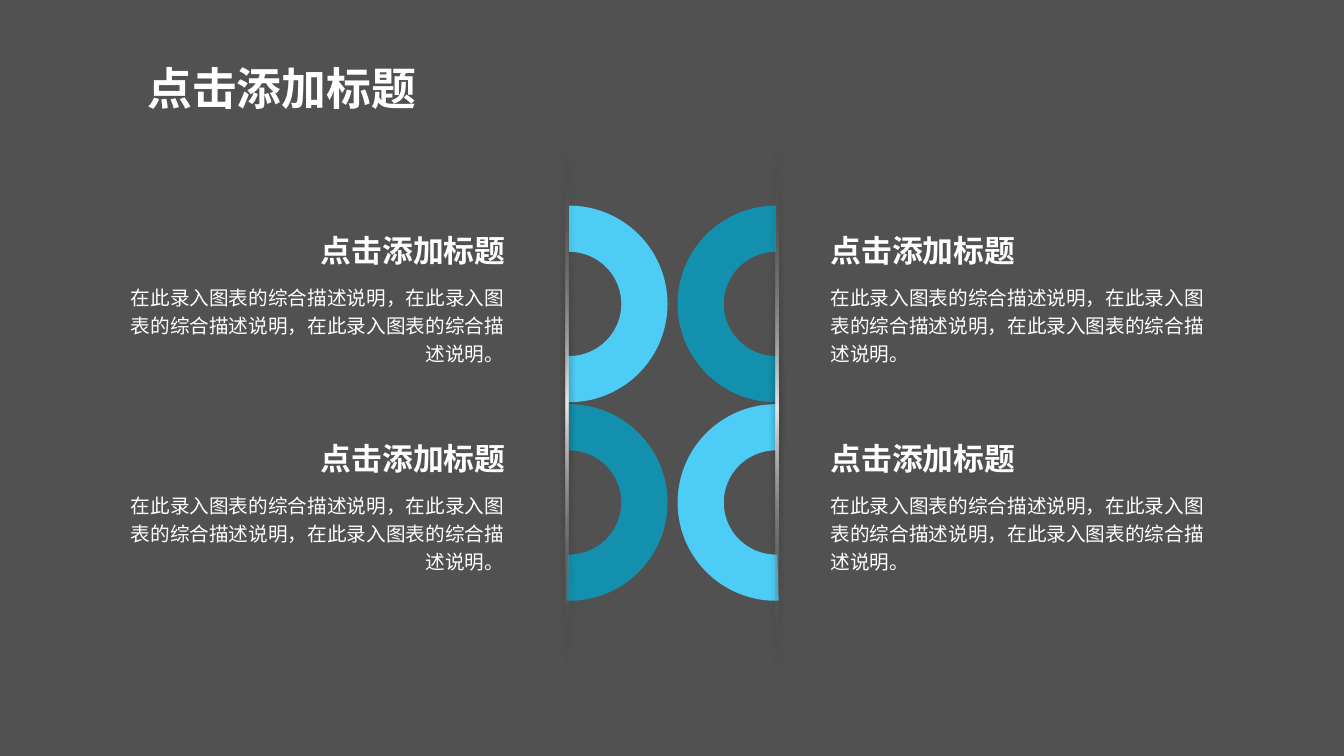
from lxml.etree import SubElement
from pptx import Presentation
from pptx.dml.color import RGBColor
from pptx.enum.shapes import MSO_SHAPE
from pptx.enum.text import MSO_ANCHOR, MSO_AUTO_SIZE, PP_ALIGN
from pptx.oxml import parse_xml
from pptx.oxml.ns import nsdecls, qn
from pptx.util import Inches, Pt

COLORS = {
    "background": "515151",
    "light": "4DCDF5",
    "dark": "1390AD",
    "text": "FFFFFF",
    "bar_end": "404040",
    "bar_middle": "E7E6E6",
    "shadow": "0D0D0D",
}
HEADING = "点击添加标题"
DESCRIPTION = "，".join(["在此录入图表的综合描述说明"] * 3) + "。"


def write_text(box, text, size, font_name, bold, align, spacing=1.0):
    frame = box.text_frame
    frame.word_wrap = True
    frame.auto_size = MSO_AUTO_SIZE.SHAPE_TO_FIT_TEXT
    frame.vertical_anchor = MSO_ANCHOR.TOP
    para = frame.paragraphs[0]
    para.text = text
    para.alignment = align
    para.line_spacing = spacing
    para.space_before = Pt(0)
    para.font.size = Pt(size)
    para.font.bold = bold
    para.font.color.rgb = RGBColor.from_string(COLORS["text"])
    para.font.name = font_name
    properties = para._p.pPr.find(qn("a:defRPr"))
    SubElement(properties, qn("a:ea")).set("typeface", "Noto Sans CJK SC")


deck = Presentation()
deck.slide_width = Inches(13.33)
deck.slide_height = Inches(7.5)
page = deck.slides.add_slide(deck.slide_layouts[5])
page.background.fill.solid()
page.background.fill.fore_color.rgb = RGBColor.from_string(COLORS["background"])

title = page.shapes.title
title.left, title.top = Inches(1.36), Inches(0.55)
title.width, title.height = Inches(2.89), Inches(0.64)
write_text(title, HEADING, 32, "Arial", True, PP_ALIGN.LEFT)
title.text_frame.word_wrap = False

ARCS = [
    (4.67, 90, False, ("light", "dark")),
    (6.72, 270, True, ("dark", "light")),
]
for left, rotation, flipped, row_colors in ARCS:
    for row, color in enumerate(row_colors):
        arc = page.shapes.add_shape(
            MSO_SHAPE.BLOCK_ARC, Inches(left), Inches(2.04 + 1.97 * row), Inches(1.95), Inches(1.95)
        )
        for index, value in enumerate((108, 0.955, 0.235)):
            arc.adjustments[index] = value
        arc.rotation = rotation
        if flipped:
            arc.element.spPr.get_or_add_xfrm().set("flipH", "1")
        arc.fill.solid()
        arc.fill.fore_color.rgb = RGBColor.from_string(COLORS[color])
        arc.line.fill.background()
        arc.shadow.inherit = False

COLUMNS = [(8.14, 8.14, PP_ALIGN.LEFT), (2.91, 1.05, PP_ALIGN.RIGHT)]
for heading_left, description_left, align in COLUMNS:
    for row in range(2):
        top = 2.25 + 2.06 * row
        heading = page.shapes.add_textbox(
            Inches(heading_left), Inches(top), Inches(2.2), Inches(0.47)
        )
        write_text(heading, HEADING, 22, "Arial", True, align)
        description = page.shapes.add_textbox(
            Inches(description_left), Inches(top + 0.49), Inches(4.05), Inches(0.95)
        )
        write_text(description, DESCRIPTION, 14, "Noto Sans CJK SC", False, align, 1.2)

for left, top in [(7.69, 1.48), (5.61, 1.45)]:
    bar = page.shapes.add_shape(
        MSO_SHAPE.RECTANGLE, Inches(left), Inches(top), Inches(0.03), Inches(5.13)
    )
    bar.line.fill.background()
    properties = bar.element.spPr
    gradient = parse_xml(
        f'<a:gradFill {nsdecls("a")} rotWithShape="1"><a:gsLst>'
        f'<a:gs pos="0"><a:srgbClr val="{COLORS["bar_end"]}"><a:alpha val="0"/></a:srgbClr></a:gs>'
        f'<a:gs pos="50000"><a:srgbClr val="{COLORS["bar_middle"]}"/></a:gs>'
        f'<a:gs pos="100000"><a:srgbClr val="{COLORS["bar_end"]}"><a:alpha val="0"/></a:srgbClr></a:gs>'
        '</a:gsLst><a:lin ang="5400000" scaled="0"/></a:gradFill>'
    )
    properties.find(qn("a:prstGeom")).addnext(gradient)
    properties.append(parse_xml(
        f'<a:effectLst {nsdecls("a")}><a:outerShdw blurRad="{Pt(5)}" dist="0" dir="0" algn="ctr">'
        f'<a:srgbClr val="{COLORS["shadow"]}"><a:alpha val="60000"/></a:srgbClr>'
        '</a:outerShdw></a:effectLst>'
    ))

deck.save("out.pptx")
